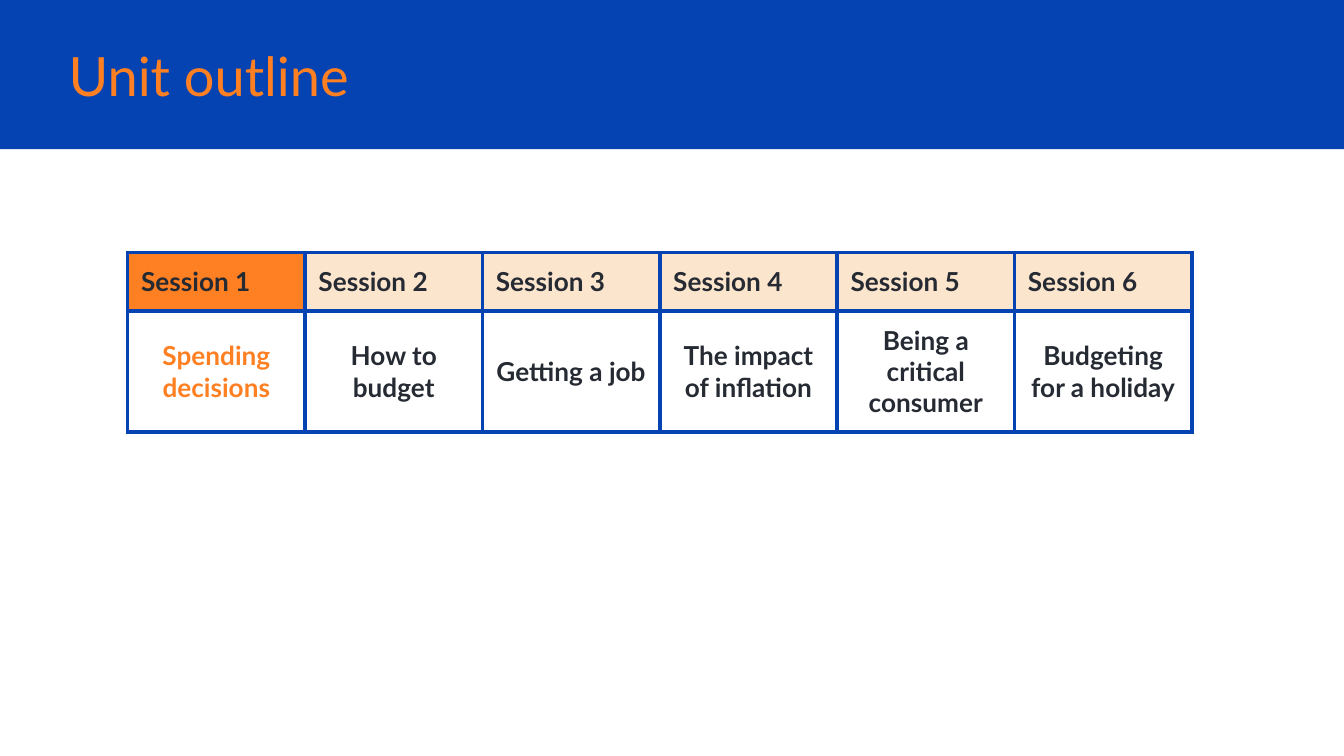
from dataclasses import dataclass

from lxml.etree import SubElement
from pptx import Presentation
from pptx.dml.color import RGBColor
from pptx.enum.shapes import MSO_SHAPE
from pptx.enum.text import MSO_ANCHOR, MSO_AUTO_SIZE, PP_ALIGN
from pptx.oxml.ns import qn
from pptx.util import Inches, Pt

BLUE = RGBColor(0x05, 0x43, 0xB3)
ORANGE = RGBColor(0xFF, 0x80, 0x22)
PEACH = RGBColor(0xFC, 0xE5, 0xCD)
INK = RGBColor(0x26, 0x2A, 0x33)
FONT = "Lato"
PAGE_WIDTH = Inches(10)
PAGE_HEIGHT = PAGE_WIDTH * 9 // 16
MARGIN = Inches(0.1)
COLUMN_WIDTH = Inches(1.32)
ROW_HEIGHT = Inches(0.42)  # rows grow to fit their text


@dataclass
class Session:
    topic: str
    current: bool = False


SESSIONS = [
    Session("Spending decisions", current=True),
    Session("How to budget"),
    Session("Getting a job"),
    Session("The impact of inflation"),
    Session("Being a critical consumer"),
    Session("Budgeting for a holiday"),
]


def write(frame, text: str, *, size: float, color: RGBColor,
          bold: bool = False, align=PP_ALIGN.LEFT) -> None:
    """Fill a text frame with one formatted paragraph."""
    para = frame.paragraphs[0]
    para.alignment = align
    span = para.add_run()
    span.text = text
    span.font.name = FONT
    span.font.size = Pt(size)
    span.font.bold = bold
    span.font.color.rgb = color


def set_margins(box) -> None:
    box.margin_left = box.margin_right = MARGIN
    box.margin_top = box.margin_bottom = MARGIN


def add_borders(cell, color: RGBColor, width: float) -> None:
    """Draw all four cell edges; call before the cell fill is set."""
    properties = cell._tc.get_or_add_tcPr()
    for edge in ("a:lnL", "a:lnR", "a:lnT", "a:lnB"):
        line = SubElement(properties, qn(edge), w=str(Pt(width)))
        fill = SubElement(line, qn("a:solidFill"))
        SubElement(fill, qn("a:srgbClr"), val=str(color))


def add_header(page, text: str) -> None:
    band = page.shapes.add_shape(
        MSO_SHAPE.RECTANGLE, 0, 0, PAGE_WIDTH, Inches(1.11))
    band.shadow.inherit = False
    band.fill.solid()
    band.fill.fore_color.rgb = BLUE
    band.line.fill.background()

    # The title sits in front of the band
    title = page.shapes.title
    band._element.addnext(title._element)
    title.left, title.top = Inches(0.41), Inches(0.28)
    title.width, title.height = Inches(8.46), Inches(0.56)
    frame = title.text_frame
    frame.auto_size = MSO_AUTO_SIZE.NONE
    frame.vertical_anchor = MSO_ANCHOR.MIDDLE
    set_margins(frame)
    write(frame, text, size=29, color=ORANGE)


def add_sessions(page, sessions: list[Session]) -> None:
    table = page.shapes.add_table(
        2, len(sessions), Inches(0.95), Inches(1.88),
        COLUMN_WIDTH * len(sessions), ROW_HEIGHT * 2).table
    table.first_row = table.horz_banding = False

    for index, session in enumerate(sessions):
        table.columns[index].width = COLUMN_WIDTH
        heading, topic = table.cell(0, index), table.cell(1, index)
        for cell in (heading, topic):
            set_margins(cell)
            add_borders(cell, BLUE, 2.25)

        heading.fill.solid()
        heading.fill.fore_color.rgb = ORANGE if session.current else PEACH
        write(heading.text_frame, f"Session {index + 1}",
              size=14, color=INK, bold=True)

        topic.fill.background()
        topic.vertical_anchor = MSO_ANCHOR.MIDDLE
        write(topic.text_frame, session.topic, size=14, bold=True,
              color=ORANGE if session.current else INK,
              align=PP_ALIGN.CENTER)


def main() -> None:
    deck = Presentation()
    deck.slide_width, deck.slide_height = PAGE_WIDTH, PAGE_HEIGHT
    page = deck.slides.add_slide(deck.slide_layouts.get_by_name("Title Only"))
    add_header(page, "Unit outline")
    add_sessions(page, SESSIONS)
    deck.save("out.pptx")


if __name__ == "__main__":
    main()
